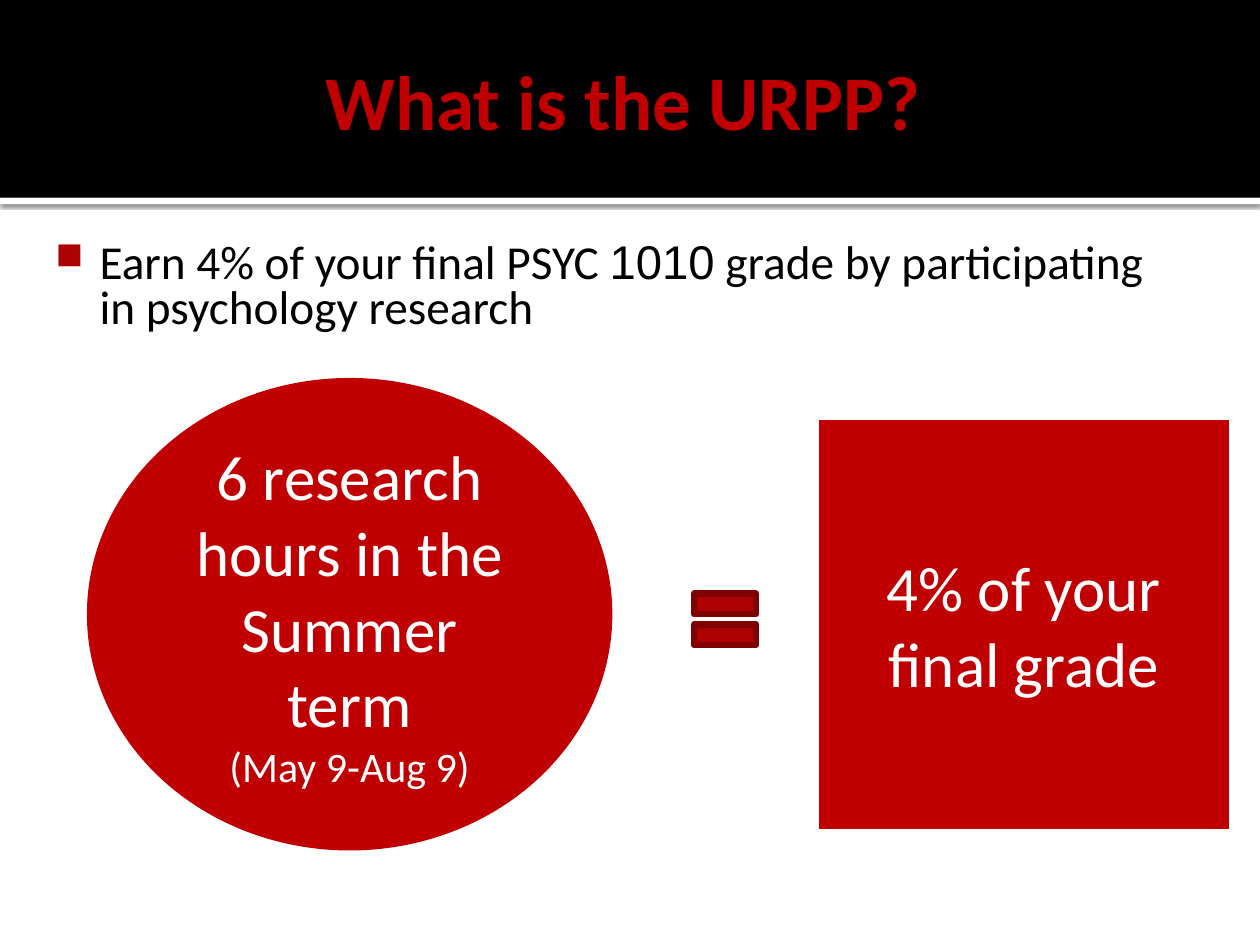
from lxml.etree import SubElement
from pptx import Presentation
from pptx.dml.color import RGBColor
from pptx.enum.shapes import MSO_SHAPE as Preset
from pptx.enum.text import MSO_ANCHOR as Anchor, PP_ALIGN as Align
from pptx.oxml.ns import qn
from pptx.util import Inches, Pt

BLACK = RGBColor(0x00, 0x00, 0x00)
WHITE = RGBColor(0xFF, 0xFF, 0xFF)
RED = RGBColor(0xC0, 0x00, 0x00)
ACCENT = RGBColor(0xAD, 0x01, 0x01)
DARK_RED = RGBColor(0x80, 0x01, 0x01)
FONT = "Calibri"
WIDTH, HEIGHT = 10, 7.5
BAND = 1.57


def set_font(font, size, color, name=FONT, bold=False):
    font.size, font.name, font.bold = Pt(size), name, bold
    font.color.rgb = color


def set_insets(frame, left, top, right, bottom):
    frame.margin_left, frame.margin_top = Inches(left), Inches(top)
    frame.margin_right, frame.margin_bottom = Inches(right), Inches(bottom)


def add_block(page, preset, place, fill, lines=()):
    """Add a filled preset shape with centred (text, size) lines."""
    block = page.shapes.add_shape(preset, *map(Inches, place))
    block.shadow.inherit = False
    block.fill.solid()
    block.fill.fore_color.rgb = fill
    block.line.fill.background()
    frame = block.text_frame
    frame.vertical_anchor = Anchor.MIDDLE
    for index, (text, size) in enumerate(lines):
        para = frame.add_paragraph() if index else frame.paragraphs[0]
        para.text = text
        para.alignment = Align.CENTER
        set_font(para.font, size, WHITE)
    return block


def add_drop_shadow(block):
    effects = block._element.spPr.find(qn("a:effectLst"))
    shadow = SubElement(effects, qn("a:outerShdw"), blurRad=str(Pt(2.5)),
                        dist=str(Pt(0.8)), dir="5400000", rotWithShape="0")
    color = SubElement(shadow, qn("a:srgbClr"), val=str(BLACK))
    SubElement(color, qn("a:alpha"), val="60000")


def add_header(page, text):
    strip = add_block(page, Preset.RECTANGLE, (0, BAND, WIDTH, 0.05), WHITE)
    add_drop_shadow(strip)
    add_block(page, Preset.RECTANGLE, (0, 0, WIDTH, BAND), BLACK)

    title = page.shapes.title
    title.left, title.top, title.width, title.height = map(
        Inches, (0.42, 0.17, 9, 1.25))
    page.shapes.element.append(title.element)  # in front of the band
    frame = title.text_frame
    frame.vertical_anchor = Anchor.MIDDLE
    set_insets(frame, 0.1, 0.05, 0.05, 0.05)
    para = frame.paragraphs[0]
    para.text = text
    para.alignment = Align.CENTER
    set_font(para.font, 44, RED, bold=True)


def add_bullet(para):
    props = para._p.get_or_add_pPr()
    props.set("marL", str(Inches(0.48)))
    props.set("indent", str(Inches(-0.35)))
    color = SubElement(props, qn("a:buClr"))
    SubElement(color, qn("a:srgbClr"), val=str(ACCENT))
    SubElement(props, qn("a:buSzPct"), val="80000")
    SubElement(props, qn("a:buChar"), char="■")


def add_statement(page, place, spans):
    """Add one bulleted paragraph made of (text, font name) spans."""
    box = page.shapes.add_textbox(*map(Inches, place))
    frame = box.text_frame
    frame.word_wrap = True
    set_insets(frame, 0.06, 0.1, 0.1, 0.05)
    para = frame.paragraphs[0]
    para.line_spacing = 0.8
    add_bullet(para)
    for text, name in spans:
        span = para.add_run()
        span.text = text
        set_font(span.font, 27, BLACK, name)


def add_equation(page):
    add_block(page, Preset.OVAL, (0.69, 3, 4.17, HEIGHT / 2), RED,
              [("6 research hours in the Summer term", 36),
               ("(May 9-Aug 9)", 24)])
    equals = add_block(page, Preset.MATH_EQUAL, (5.42, 4.57, 0.67, 0.69), ACCENT)
    equals.line.color.rgb = DARK_RED
    equals.line.width = Pt(3.78)
    add_block(page, Preset.FLOWCHART_PROCESS, (6.5, 3.33, 3.25, 3.25), RED,
              [("4% of your final grade", 36)])


def main():
    deck = Presentation()
    deck.slide_width, deck.slide_height = Inches(WIDTH), Inches(HEIGHT)
    page = deck.slides.add_slide(deck.slide_layouts.get_by_name("Title Only"))
    add_header(page, "What is the URPP?")
    add_statement(page, (0.25, 1.83, 9.25, 1.25), [
        ("Earn 4% of your final PSYC ", FONT),
        ("1010", "Arial"),
        (" grade by participating in psychology research", FONT)])
    add_equation(page)
    deck.save("out.pptx")


if __name__ == "__main__":
    main()
